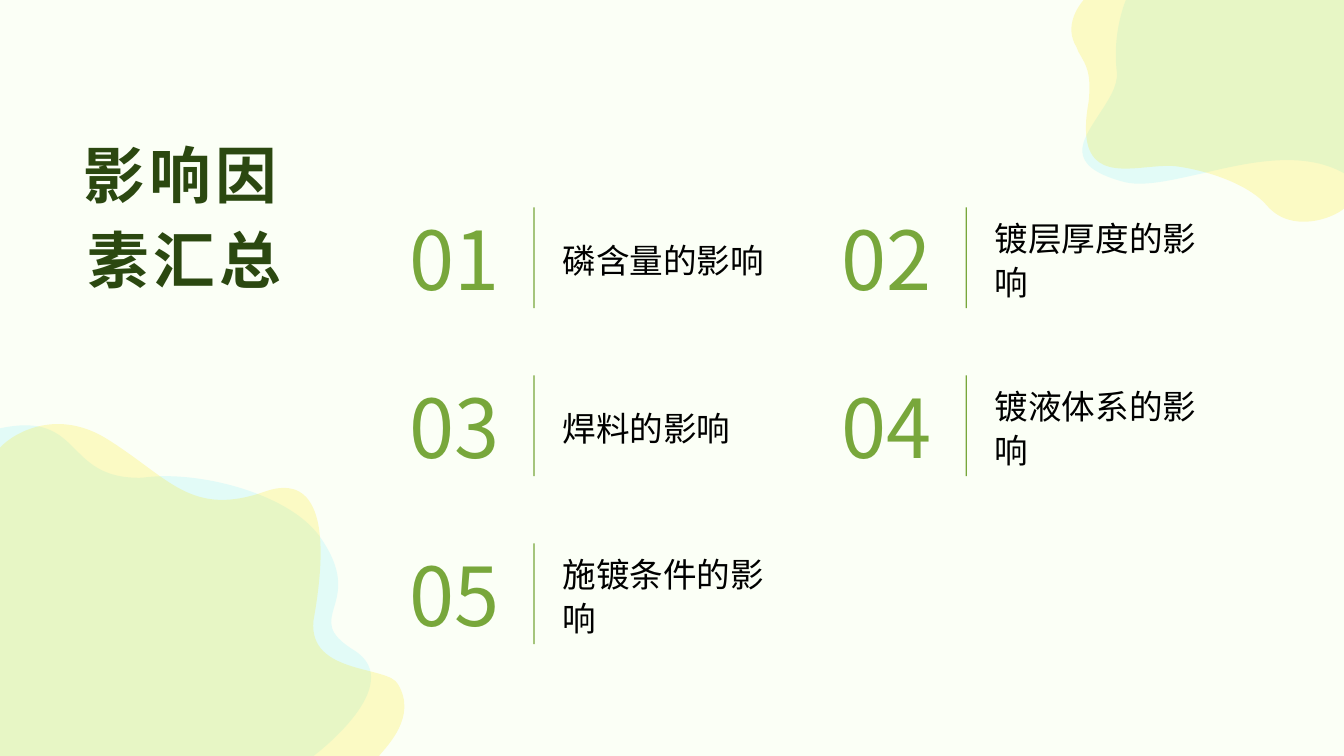
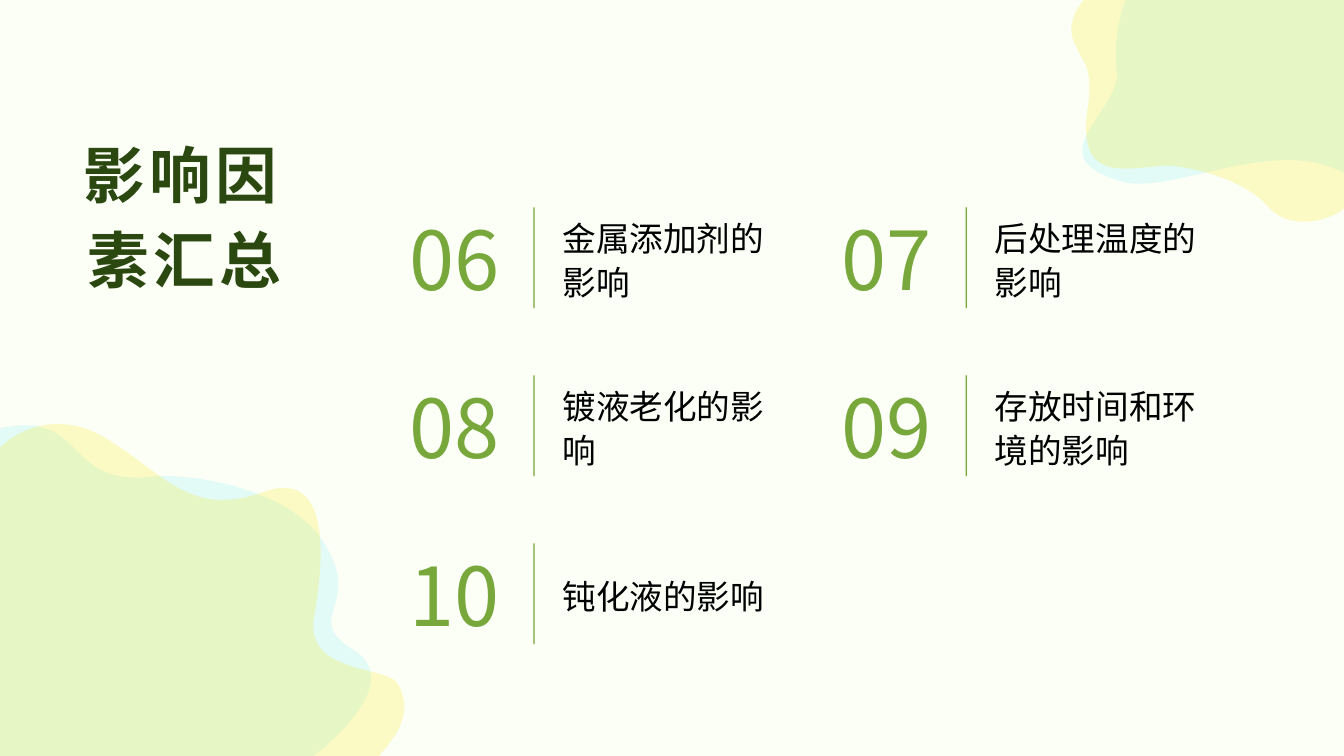
from dataclasses import dataclass

from lxml import etree
from pptx import Presentation
from pptx import util as u
from pptx.dml.color import RGBColor
from pptx.enum import shapes, text
from pptx.oxml import ns
from pptx.shapes.autoshape import Shape
from pptx.slide import Slide, SlideLayout

FONT = "Noto Sans CJK SC"
CREAM, DARK_GREEN, GREEN, BLACK = "FBFFF6", "2B4810", "78A73B", "000000"
CYAN, YELLOW = "80EFFF", "FEE600"
WIDTH, HEIGHT = 960, 540
TITLE = "影响因素汇总"
COLUMNS = 2
GRID_LEFT, GRID_TOP = 283, 143.2
COLUMN_STEP, ROW_STEP = 308.8, 120

Point = tuple[float, float]
Box = tuple[float, float, float, float]


@dataclass(frozen=True)
class TextStyle:
    size: float
    color: str
    align: text.PP_ALIGN
    anchor: text.MSO_ANCHOR
    line_spacing: float
    bold: bool = False
    tracking: float = 0


@dataclass(frozen=True)
class Blob:
    color: str
    box: Box
    start: Point
    segments: list[tuple[float, ...]]


@dataclass(frozen=True)
class Agenda:
    first_number: int
    factors: list[str]


TITLE_STYLE = TextStyle(44, DARK_GREEN, text.PP_ALIGN.RIGHT, text.MSO_ANCHOR.TOP, 1.14, True, 3)
NUMBER_STYLE = TextStyle(58, GREEN, text.PP_ALIGN.CENTER, text.MSO_ANCHOR.MIDDLE, 1.09)
FACTOR_STYLE = TextStyle(24, BLACK, text.PP_ALIGN.LEFT, text.MSO_ANCHOR.MIDDLE, 1.11)

BLOBS = [
    Blob(CYAN, (0, 304, 265, 236), (228.2, 383), [
        (206.6, 352.8, 141.8, 335.5, 101.5, 341.3),
        (44.6, 342.7, 60.5, 293, 0, 306),
        (0, HEIGHT), (224, HEIGHT),
        (224, HEIGHT, 292.3, 488.9, 252.7, 464.4),
        (213.1, 439.9, 263.5, 432.7, 228.2, 383),
    ]),
    Blob(YELLOW, (0, 303, 289, 237), (77, 313.9), [
        (41.8, 291.6, 10.8, 308.2, 0, 319.7),
        (0, HEIGHT), (270.7, HEIGHT),
        (276.5, 532.8, 298.1, 511.9, 284.4, 488.9),
        (277.9, 475.2, 220.3, 482.4, 223.9, 443.5),
        (241.9, 343.4, 208.1, 344.9, 190.8, 350.6),
        (136.8, 370.1, 121.7, 342, 77, 313.9),
    ]),
    Blob(CYAN, (773, 0, 187, 131), (WIDTH, 0), [
        (WIDTH, 123.8),
        (931, 107.3, 892.1, 115.9, 859, 123.8),
        (835.9, 128.9, 815.8, 133.9, 801.4, 129.6),
        (760.3, 118.1, 772.6, 100.8, 784.8, 82.1),
        (791.3, 72, 798.5, 61.9, 797.8, 51.8),
        (794.2, 23, 804.2, 0, 804.2, 0),
        (WIDTH, 0),
    ]),
    Blob(YELLOW, (765, 0, 195, 158.4), (WIDTH, 0), [
        (WIDTH, 149),
        (951.8, 156.2, 922.3, 167, 905, 146.9),
        (893.5, 133.2, 866.2, 122.4, 840.2, 118.8),
        (833.8, 118.1, 826.6, 118.8, 819.4, 119.5),
        (794.9, 121.7, 768.2, 124.6, 777.6, 72.7),
        (779.8, 51.8, 775.4, 46.1, 771.8, 39.6),
        (770.4, 37.4, 769.7, 36, 769, 33.8),
        (759.6, 18.7, 770.4, 4.3, 774, 0),
        (WIDTH, 0),
    ]),
]

AGENDAS = [
    Agenda(1, ["磷含量的影响", "镀层厚度的影响", "焊料的影响", "镀液体系的影响", "施镀条件的影响"]),
    Agenda(6, ["金属添加剂的影响", "后处理温度的影响", "镀液老化的影响",
               "存放时间和环境的影响", "钝化液的影响"]),
]


def rgb(color: str) -> RGBColor:
    return RGBColor.from_string(color)


def points(*lengths: float) -> list[u.Length]:
    return [u.Pt(length) for length in lengths]


def paint(shape: Shape, color: str) -> None:
    shape.fill.solid()
    shape.fill.fore_color.rgb = rgb(color)
    shape.line.fill.background()
    shape.shadow.inherit = False


def write(shape: Shape, content: str, style: TextStyle) -> None:
    frame = shape.text_frame
    frame.text = content
    frame.word_wrap = True
    frame.auto_size = text.MSO_AUTO_SIZE.NONE
    frame.vertical_anchor = style.anchor
    frame.margin_left = frame.margin_right = frame.margin_top = frame.margin_bottom = 0
    paragraph = frame.paragraphs[0]
    paragraph.alignment = style.align
    paragraph.line_spacing = style.line_spacing
    run = paragraph.runs[0]
    run.font.size = u.Pt(style.size)
    run.font.bold = style.bold
    run.font.color.rgb = rgb(style.color)
    run.font.name = FONT
    properties = run._r.get_or_add_rPr()
    etree.SubElement(properties, ns.qn("a:ea"), typeface=FONT)
    if style.tracking:
        properties.set("spc", str(round(style.tracking * 100)))


def add_rectangle(holder: Slide, box: Box, color: str) -> Shape:
    shape = holder.shapes.add_shape(shapes.MSO_SHAPE.RECTANGLE, *points(*box))
    paint(shape, color)
    return shape


def trace(outline: etree._Element, blob: Blob) -> None:
    left, top = blob.box[:2]
    for child in list(outline):
        outline.remove(child)
    commands = {2: "a:lnTo", 6: "a:cubicBezTo"}
    steps = [("a:moveTo", blob.start)]
    steps += [(commands[len(segment)], segment) for segment in blob.segments]
    for tag, values in steps:
        command = etree.SubElement(outline, ns.qn(tag))
        for x, y in zip(values[::2], values[1::2]):
            etree.SubElement(command, ns.qn("a:pt"),
                             x=str(int(u.Pt(x - left))), y=str(int(u.Pt(y - top))))
    etree.SubElement(outline, ns.qn("a:close"))


def draw_blob(slide: Slide, blob: Blob) -> Shape:
    left, top, width, height = points(*blob.box)
    builder = slide.shapes.build_freeform(left, top)
    builder.add_line_segments([(left + width, top + height)])
    shape = builder.convert_to_shape()
    trace(shape.element.spPr.find(".//" + ns.qn("a:path")), blob)
    paint(shape, blob.color)
    color = shape.element.spPr.find(".//" + ns.qn("a:srgbClr"))
    etree.SubElement(color, ns.qn("a:alpha"), val="20000")
    return shape


def decorate_layout(layout: SlideLayout, slide: Slide) -> None:
    backdrop = add_rectangle(slide, (0, 0, WIDTH, HEIGHT), CREAM)
    decorations = [backdrop] + [draw_blob(slide, blob) for blob in BLOBS]
    for position, decoration in enumerate(decorations, start=2):
        layout.shapes.element.insert(position, decoration.element)


def draw_factor(slide: Slide, index: int, number: int, factor: str) -> None:
    row, column = divmod(index, COLUMNS)
    left = GRID_LEFT + column * COLUMN_STEP
    top = GRID_TOP + row * ROW_STEP
    group = slide.shapes.add_group_shape()
    number_box = group.shapes.add_textbox(*points(left, top, 83.5, 76.3))
    write(number_box, f"{number:02d}", NUMBER_STYLE)
    add_rectangle(group, (left + 98, top + 5, 0.9, 72), GREEN)
    factor_box = group.shapes.add_textbox(*points(left + 118.8, top + 5, 153.4, 72))
    write(factor_box, factor, FACTOR_STYLE)


def draw_agenda(slide: Slide, agenda: Agenda) -> None:
    title = slide.shapes.title
    title.left, title.top, title.width, title.height = points(23, 90.7, 178, 60)
    write(title, TITLE, TITLE_STYLE)
    for index, factor in enumerate(agenda.factors):
        draw_factor(slide, index, agenda.first_number + index, factor)


def main() -> None:
    presentation = Presentation()
    presentation.slide_width, presentation.slide_height = points(WIDTH, HEIGHT)
    layout = presentation.slide_layouts.get_by_name("Title Only")
    slides = [presentation.slides.add_slide(layout) for _ in AGENDAS]
    decorate_layout(layout, slides[0])
    for slide, agenda in zip(slides, AGENDAS):
        draw_agenda(slide, agenda)
    presentation.save("out.pptx")


if __name__ == "__main__":
    main()
